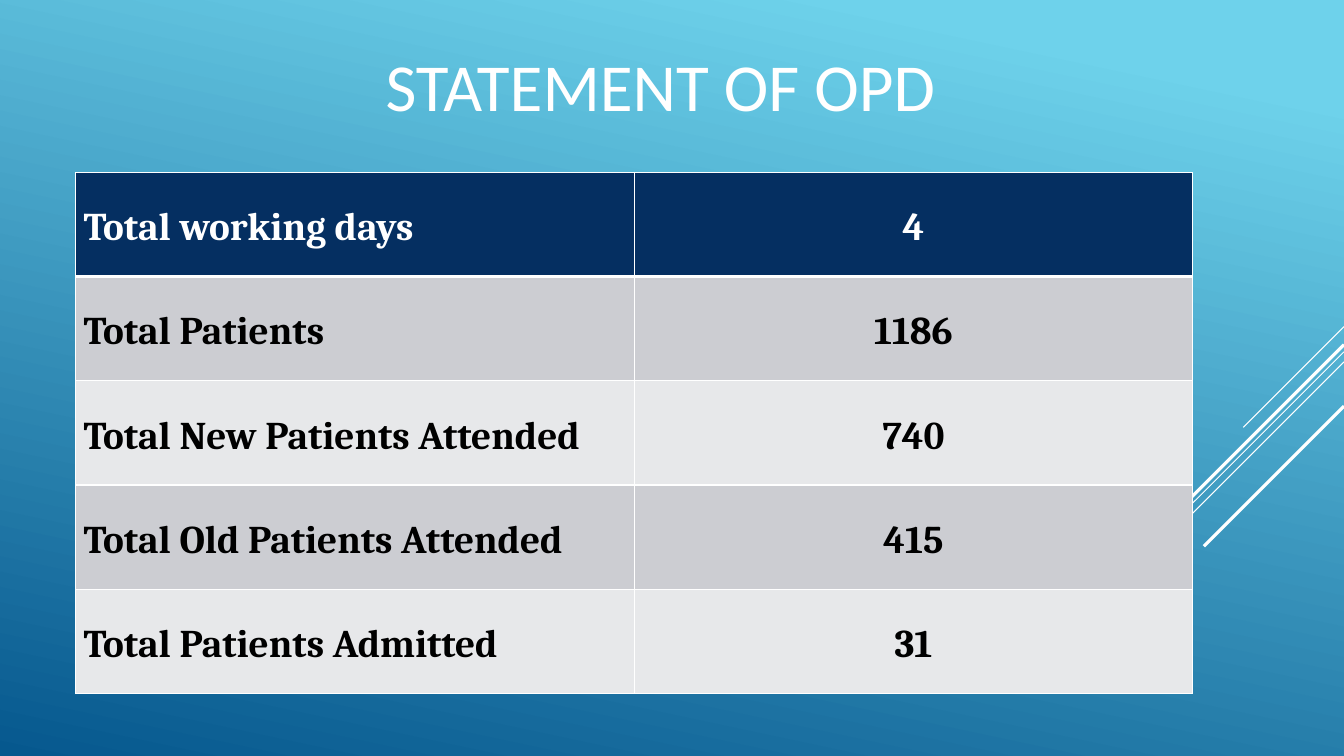
from dataclasses import dataclass

from lxml import etree
from pptx import Presentation
from pptx import util as u
from pptx.dml.color import RGBColor
from pptx.enum import shapes, text
from pptx.oxml.ns import qn


@dataclass(frozen=True)
class Theme:
    white: str = "FFFFFF"
    black: str = "000000"
    navy: str = "052F61"
    bands: tuple = ("CCCDD2", "E7E8EA")
    sky: str = "6ED2EB"
    deep: str = "06588E"
    title_font: str = "Calibri"
    table_font: str = "Cambria"
    title_size: int = 48
    table_size: int = 28


T = Theme()
WIDTH, HEIGHT = 13.33, 7.5
LEFT, CONTENT_W = 0.75, 11.08
TABLE_TOP, ROW_H = 1.71, 1.034

# Each diagonal falls at 45 degrees from the right edge: start y, run, weight
DIAGONALS = [
    (3.24, 1.0, 0.75),
    (3.49, 3.26, 0.75),
    (3.59, 2.07, 0.75),
    (3.42, 1.91, 2.25),
    (4.03, 1.39, 2.25),
]

OPD_ROWS = [
    ("Total working days", "4"),
    ("Total Patients", "1186"),
    ("Total New Patients Attended", "740"),
    ("Total Old Patients Attended", "415"),
    ("Total Patients Admitted", "31"),
]


def rgb(color):
    return RGBColor.from_string(color)


def add_run(p, words, font, size, color, bold=False):
    r = p.add_run()
    r.text = words
    r.font.name = font
    r.font.size = u.Pt(size)
    r.font.bold = bold
    r.font.color.rgb = rgb(color)


def set_background(s):
    fill = s.background.fill
    fill.gradient()
    fill.gradient_angle = 360 - 102
    for stop, position, color in zip(fill.gradient_stops, (0.1, 1), (T.sky, T.deep)):
        stop.position = position
        stop.color.rgb = rgb(color)


def add_diagonal(s, y, run, weight):
    line = s.shapes.add_connector(
        shapes.MSO_CONNECTOR.STRAIGHT,
        u.Inches(WIDTH), u.Inches(y), u.Inches(WIDTH - run), u.Inches(y + run))
    line.line.color.rgb = rgb(T.white)
    line.line.width = u.Pt(weight)
    etree.SubElement(line._element.spPr, qn("a:effectLst"))


def add_title(s, words):
    sp = s.shapes.add_textbox(
        u.Inches(LEFT), u.Inches(0.28), u.Inches(CONTENT_W), u.Inches(1.22))
    tf = sp.text_frame
    tf.word_wrap = True
    tf.vertical_anchor = text.MSO_ANCHOR.MIDDLE
    tf.margin_left = u.Inches(0.62)  # sets the title right of the table's centre
    p = tf.paragraphs[0]
    p.alignment = text.PP_ALIGN.CENTER
    p.line_spacing = 0.9
    add_run(p, words, T.title_font, T.title_size, T.white)


def set_borders(cell, **weights):
    tcPr = cell._tc.get_or_add_tcPr()
    for side, weight in weights.items():
        ln = etree.SubElement(tcPr, qn(f"a:ln{side}"), w=str(u.Pt(weight)))
        fill = etree.SubElement(ln, qn("a:solidFill"))
        etree.SubElement(fill, qn("a:srgbClr"), val=T.white)


def fill_cell(cell, words, align, fill, color, top, bottom):
    set_borders(cell, L=1, R=1, T=top, B=bottom)
    cell.fill.solid()
    cell.fill.fore_color.rgb = rgb(fill)
    cell.vertical_anchor = text.MSO_ANCHOR.MIDDLE
    cell.margin_left = cell.margin_right = u.Inches(0.08)
    cell.margin_top = cell.margin_bottom = 0
    p = cell.text_frame.paragraphs[0]
    p.alignment = align
    p.line_spacing = 1.15
    add_run(p, words, T.table_font, T.table_size, color, bold=True)


def add_opd_table(s, rows):
    aligns = (text.PP_ALIGN.JUSTIFY, text.PP_ALIGN.CENTER)
    table = s.shapes.add_table(
        len(rows), len(aligns), u.Inches(LEFT), u.Inches(TABLE_TOP),
        u.Inches(CONTENT_W), u.Inches(ROW_H * len(rows))).table
    for i, row in enumerate(rows):
        header = i == 0
        fill = T.navy if header else T.bands[(i - 1) % 2]
        color = T.white if header else T.black
        top, bottom = 3 if i == 1 else 1, 3 if header else 1
        for j, words in enumerate(row):
            fill_cell(table.cell(i, j), words, aligns[j], fill, color, top, bottom)


def main():
    prs = Presentation()
    prs.slide_width, prs.slide_height = u.Inches(WIDTH), u.Inches(HEIGHT)
    s = prs.slides.add_slide(prs.slide_layouts[6])

    # Backdrop
    set_background(s)
    for diagonal in DIAGONALS:
        add_diagonal(s, *diagonal)

    # Content
    add_title(s, "STATEMENT OF OPD")
    add_opd_table(s, OPD_ROWS)

    prs.save("out.pptx")


if __name__ == "__main__":
    main()
